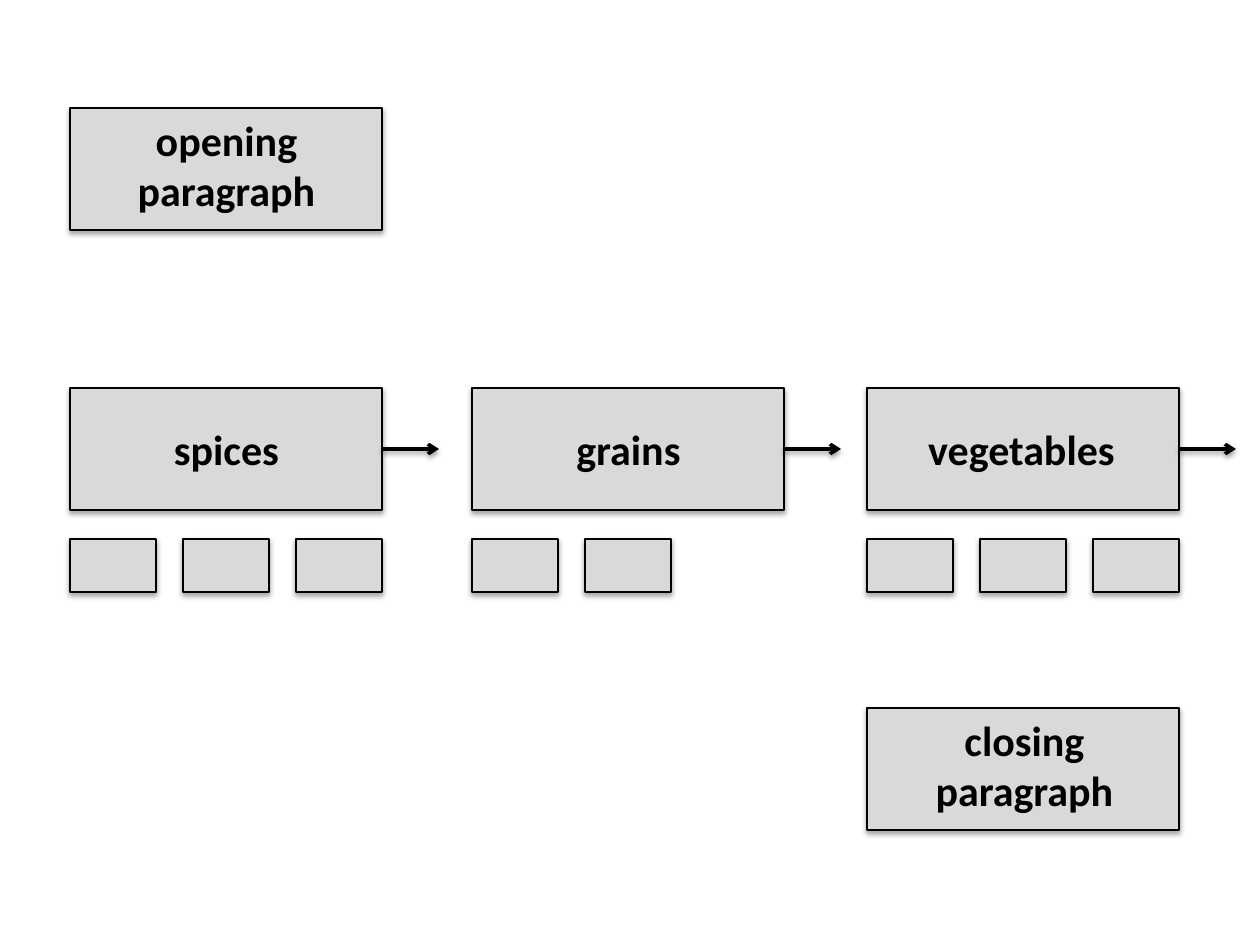
from lxml import etree
from pptx import Presentation
from pptx.dml.color import RGBColor
from pptx.enum.shapes import MSO_CONNECTOR, MSO_SHAPE
from pptx.enum.text import MSO_AUTO_SIZE, PP_ALIGN
from pptx.oxml.ns import qn
from pptx.util import Pt

RECT = MSO_SHAPE.RECTANGLE
LINE = MSO_CONNECTOR.STRAIGHT
GROW = MSO_AUTO_SIZE.SHAPE_TO_FIT_TEXT
CENTER = PP_ALIGN.CENTER
BLACK = RGBColor(0, 0, 0)
GRAY = RGBColor(0xD9, 0xD9, 0xD9)

SCALE = 914400 / 126
BOX_W, BOX_H = 312, 122
TEXT_W = 343
ROW_TOP = 388
PART_TOP, PART_W, PART_H, PART_STEP = 539, 86, 53, 113
ARROW_W = 57

TOPICS = [
    (70, 55, "spices", 3),
    (472, 457, "grains", 2),
    (867, 850, "vegetables", 3),
]
ENDS = [
    (70, 108, 55, ["opening paragraph"]),
    (867, 708, 853, ["closing", "paragraph"]),
]


def px(*nums):
    return [round(n * SCALE) for n in nums]


def add_shadow(props, dist, alpha):
    effects = etree.SubElement(props, qn("a:effectLst"))
    shadow = etree.SubElement(
        effects, qn("a:outerShdw"), blurRad=str(Pt(3.1)), dist=str(Pt(dist)),
        dir="5400000", rotWithShape="0")
    color = etree.SubElement(shadow, qn("a:srgbClr"), val=str(BLACK))
    etree.SubElement(color, qn("a:alpha"), val=str(alpha * 1000))


def add_box(slide, left, top, width=BOX_W, height=BOX_H):
    box = slide.shapes.add_shape(RECT, *px(left, top, width, height))
    box.fill.solid()
    box.fill.fore_color.rgb = GRAY
    box.line.color.rgb = BLACK
    box.line.width = Pt(1.5)
    add_shadow(box._element.spPr, 1.8, 35)
    return box


def add_arrow(slide, box, left):
    start = left + BOX_W
    mid = ROW_TOP + BOX_H // 2
    arrow = slide.shapes.add_connector(
        LINE, *px(start, mid, start + ARROW_W, mid))
    arrow.begin_connect(box, 3)
    arrow.line.color.rgb = BLACK
    arrow.line.width = Pt(2)
    etree.SubElement(arrow.line._get_or_add_ln(), qn("a:tailEnd"), type="arrow")
    add_shadow(arrow._element.spPr, 1.6, 38)


def add_label(slide, left, top, height, lines):
    label = slide.shapes.add_textbox(*px(left, top, TEXT_W, height))
    frame = label.text_frame
    frame.word_wrap = True
    frame.auto_size = GROW
    frame.text = "\n".join(lines)
    for para in frame.paragraphs:
        para.alignment = CENTER
        para.font.name = "Calibri"
        para.font.size = Pt(24)
        para.font.bold = True
        para.font.color.rgb = BLACK


def add_topic(slide, left, text_left, word, count):
    box = add_box(slide, left, ROW_TOP)
    add_arrow(slide, box, left)
    add_label(slide, text_left, 417, 63, [word])
    for i in range(count):
        add_box(slide, left + i * PART_STEP, PART_TOP, PART_W, PART_H)


def main():
    deck = Presentation()
    deck.slide_width, deck.slide_height = px(1260, 945)
    slide = deck.slides.add_slide(deck.slide_layouts[6])
    for topic in TOPICS:
        add_topic(slide, *topic)
    for left, top, text_left, lines in ENDS:
        add_box(slide, left, top)
        add_label(slide, text_left, top, 115, lines)
    deck.save("out.pptx")


if __name__ == "__main__":
    main()
